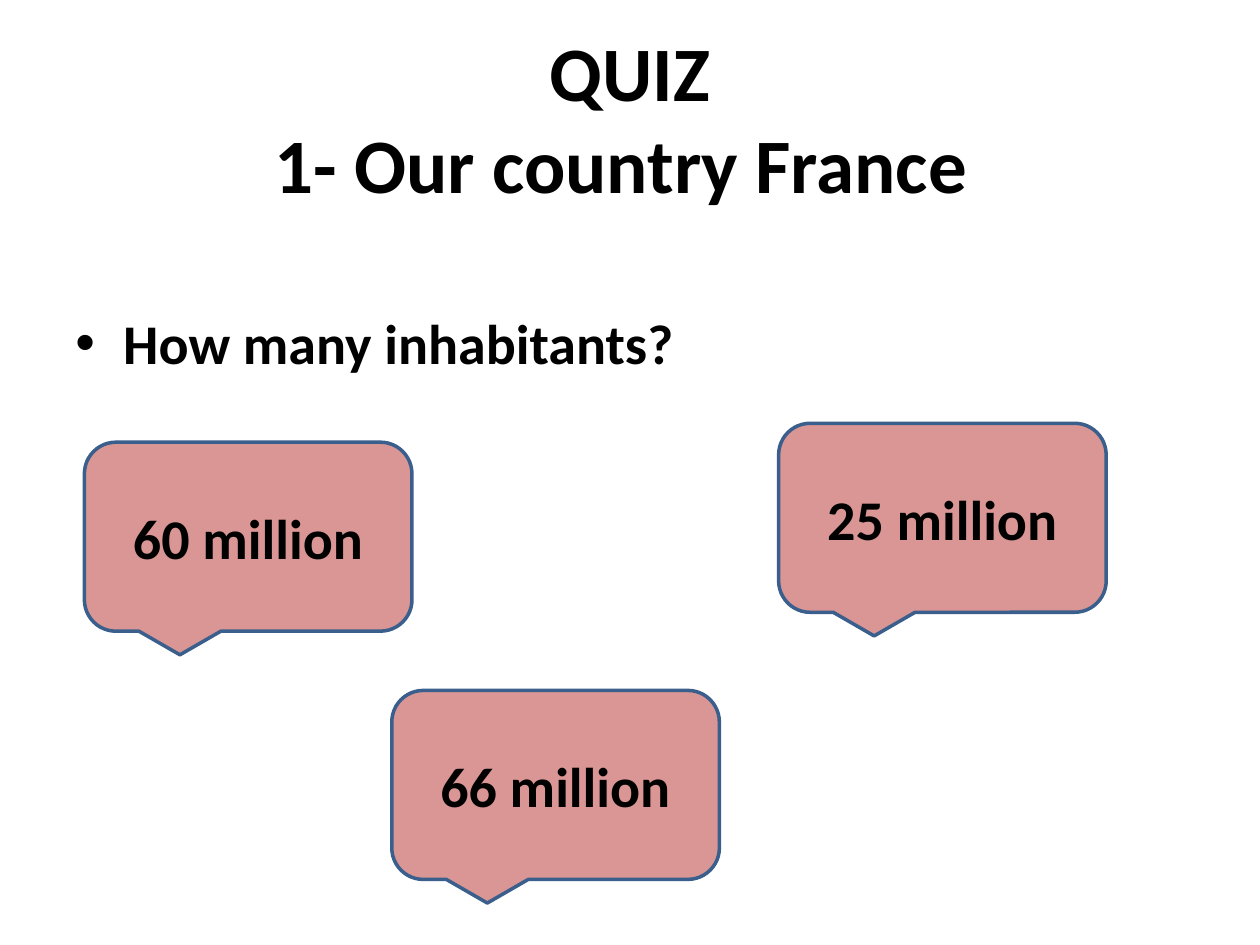
from lxml import etree
from pptx import Presentation
from pptx import util as u
from pptx.dml.color import RGBColor
from pptx.enum import shapes, text
from pptx.oxml.ns import qn

HUES = {"ink": "000000", "fill": "D99694", "edge": "3A5F8C"}


def style(frame, size, align, anchor):
    frame.word_wrap = True
    frame.vertical_anchor = anchor
    for para in frame.paragraphs:
        para.alignment = align
        for run in para.runs:
            run.font.name = "Calibri"
            run.font.size = u.Pt(size)
            run.font.bold = True
            run.font.color.rgb = RGBColor.from_string(HUES["ink"])


deck = Presentation()
deck.slide_width, deck.slide_height = u.Inches(10), u.Inches(7.5)
slide = deck.slides.add_slide(deck.slide_layouts[6])

# Title
title = slide.shapes.add_textbox(u.Inches(0.5), u.Inches(0.3), u.Inches(9), u.Inches(1.25))
title.text_frame.text = "QUIZ\v1- Our country France "
style(title.text_frame, 44, text.PP_ALIGN.CENTER, text.MSO_ANCHOR.MIDDLE)

# Question with a bullet
quest = slide.shapes.add_textbox(u.Inches(0.5), u.Inches(2.4), u.Inches(9), u.Inches(0.65))
quest.text_frame.text = "How many inhabitants?"
style(quest.text_frame, 32, text.PP_ALIGN.LEFT, text.MSO_ANCHOR.TOP)
props = quest.text_frame.paragraphs[0]._p.get_or_add_pPr()
props.set("marL", str(u.Inches(0.38)))
props.set("indent", str(u.Inches(-0.38)))
etree.SubElement(props, qn("a:buFont")).set("typeface", "Arial")
etree.SubElement(props, qn("a:buChar")).set("char", "•")

# Answers
for label, left, top in [
    ("60 million", 0.67, 3.51),
    ("25 million", 6.18, 3.36),
    ("66 million", 3.11, 5.48),
]:
    bubble = slide.shapes.add_shape(
        shapes.MSO_SHAPE.ROUNDED_RECTANGULAR_CALLOUT,
        u.Inches(left), u.Inches(top), u.Inches(2.6), u.Inches(1.5))
    bubble.shadow.inherit = False
    bubble.fill.solid()
    bubble.fill.fore_color.rgb = RGBColor.from_string(HUES["fill"])
    bubble.line.color.rgb = RGBColor.from_string(HUES["edge"])
    bubble.line.width = u.Pt(2)
    bubble.text_frame.text = label
    style(bubble.text_frame, 32, text.PP_ALIGN.CENTER, text.MSO_ANCHOR.MIDDLE)

deck.save("out.pptx")
